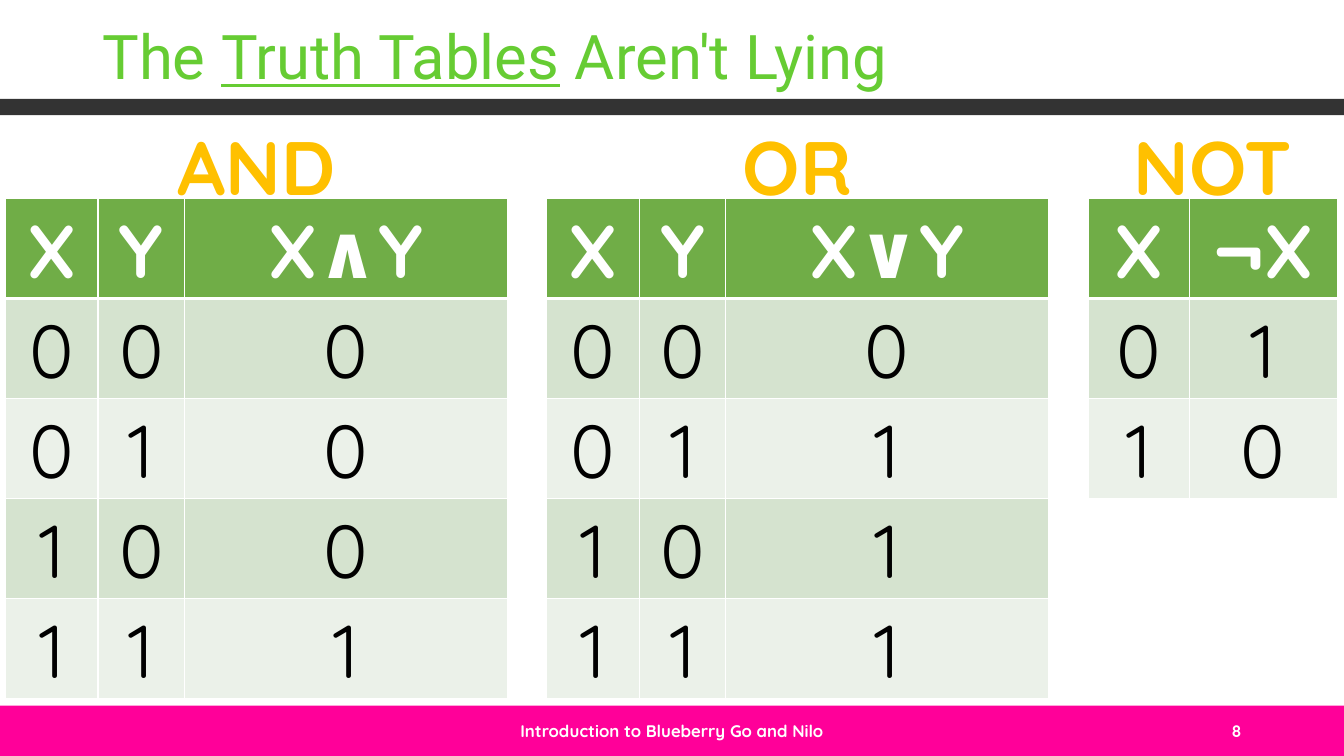
import itertools
from dataclasses import dataclass

import pptx
import pptx.dml.color
import pptx.enum.shapes
import pptx.enum.text
import pptx.oxml
import pptx.oxml.ns
import pptx.util

Cm = pptx.util.Cm
Pt = pptx.util.Pt
ALIGN = pptx.enum.text.PP_ALIGN
ANCHOR = pptx.enum.text.MSO_ANCHOR


@dataclass(frozen=True)
class Theme:
    title_font: str = "Roboto"
    body_font: str = "Quicksand"
    title: str = "66CC33"
    heading: str = "FFC000"
    header_fill: str = "70AD47"
    bands: tuple = ("D5E3CF", "EBF1E9")
    light: str = "FFFFFF"
    dark: str = "000000"
    rule: str = "333333"
    footer: str = "FF0099"
    title_size: float = 44
    heading_size: float = 54
    cell_size: float = 53.5
    footer_size: float = 12


THEME = Theme()
SLIDE_W, SLIDE_H = 33.87, 19.05
HEADING_TOP, TABLE_TOP = 2.9, 5
ROW_H = 2.52


def rgb(value):
    return pptx.dml.color.RGBColor.from_string(value)


def style_run(r, size, color, bold=False, font=THEME.body_font):
    r.font.name = font
    r.font.size = Pt(size)
    r.font.bold = bold
    r.font.color.rgb = rgb(color)


def add_bar(s, top, height, color):
    sp = s.shapes.add_shape(pptx.enum.shapes.MSO_SHAPE.RECTANGLE,
                            0, Cm(top), Cm(SLIDE_W), Cm(height))
    sp.shadow.inherit = False
    sp.fill.solid()
    sp.fill.fore_color.rgb = rgb(color)
    sp.line.fill.background()


def add_box(s, left, top, width, height, align, anchor=ANCHOR.TOP):
    tf = s.shapes.add_textbox(Cm(left), Cm(top), Cm(width), Cm(height)).text_frame
    tf.word_wrap = True
    tf.vertical_anchor = anchor
    p = tf.paragraphs[0]
    p.alignment = align
    return p


def add_label(s, text, left, top, width, height, size, color,
              align=ALIGN.CENTER, anchor=ANCHOR.TOP):
    p = add_box(s, left, top, width, height, align, anchor)
    p.text = text
    style_run(p.runs[0], size, color, bold=True)


def add_title(s, parts):
    p = add_box(s, 2.33, 0, 29.21, 2.47, ALIGN.LEFT, ANCHOR.BOTTOM)
    p.line_spacing = 0.9
    for text, underlined in parts:
        r = p.add_run()
        r.text = text
        r.font.underline = underlined
        style_run(r, THEME.title_size, THEME.title, font=THEME.title_font)


def set_borders(cell, row):
    widths = {"L": 1, "R": 1, "T": 3 if row == 1 else 1, "B": 3 if row == 0 else 1}
    tc_pr = cell._tc.get_or_add_tcPr()
    for side, width in widths.items():
        tc_pr.append(pptx.oxml.parse_xml(
            f'<a:ln{side} {pptx.oxml.ns.nsdecls("a")} w="{Pt(width)}">'
            f'<a:solidFill><a:srgbClr val="{THEME.light}"/></a:solidFill>'
            f'</a:ln{side}>'))


def fill_cell(cell, row, text):
    header = row == 0
    set_borders(cell, row)
    cell.fill.solid()
    cell.fill.fore_color.rgb = rgb(
        THEME.header_fill if header else THEME.bands[(row - 1) % 2])
    p = cell.text_frame.paragraphs[0]
    p.text = text
    p.alignment = ALIGN.CENTER
    style_run(p.runs[0], THEME.cell_size,
              THEME.light if header else THEME.dark, bold=header)


def add_truth_table(s, name, left, col_widths, header, operation):
    width = sum(col_widths)
    inputs = itertools.product((0, 1), repeat=len(header) - 1)
    rows = [header] + [(*values, operation(*values)) for values in inputs]
    table = s.shapes.add_table(len(rows), len(header), Cm(left), Cm(TABLE_TOP),
                               Cm(width), Cm(ROW_H * len(rows))).table
    for column, col_width in zip(table.columns, col_widths):
        column.width = Cm(col_width)
    for i, row in enumerate(rows):
        for j, value in enumerate(row):
            fill_cell(table.cell(i, j), i, str(value))
    add_label(s, name, left, HEADING_TOP, width, 2.57,
              THEME.heading_size, THEME.heading)


def main():
    prs = pptx.Presentation()
    prs.slide_width, prs.slide_height = Cm(SLIDE_W), Cm(SLIDE_H)
    s = prs.slides.add_slide(prs.slide_layouts[6])

    add_bar(s, 17.78, 1.27, THEME.footer)
    add_bar(s, 2.49, 0.41, THEME.rule)
    add_title(s, [("The ", False), ("Truth Tables", True), (" Aren't Lying", False)])
    add_label(s, "Introduction to Blueberry Go and Nilo", 11.22, 17.9, 11.43, 1.02,
              THEME.footer_size, THEME.light, anchor=ANCHOR.MIDDLE)
    add_label(s, "8", 23.92, 17.9, 7.62, 1.02, THEME.footer_size, THEME.light,
              ALIGN.RIGHT, ANCHOR.MIDDLE)

    two_inputs = (2.34, 2.18, 8.13)
    add_truth_table(s, "AND", 0.13, two_inputs, ("X", "Y", "X∧Y"), lambda x, y: x & y)
    add_truth_table(s, "OR", 13.77, two_inputs, ("X", "Y", "X∨Y"), lambda x, y: x | y)
    add_truth_table(s, "NOT", 27.43, (2.54, 3.73), ("X", "¬X"), lambda x: 1 - x)

    prs.save("out.pptx")


if __name__ == "__main__":
    main()
